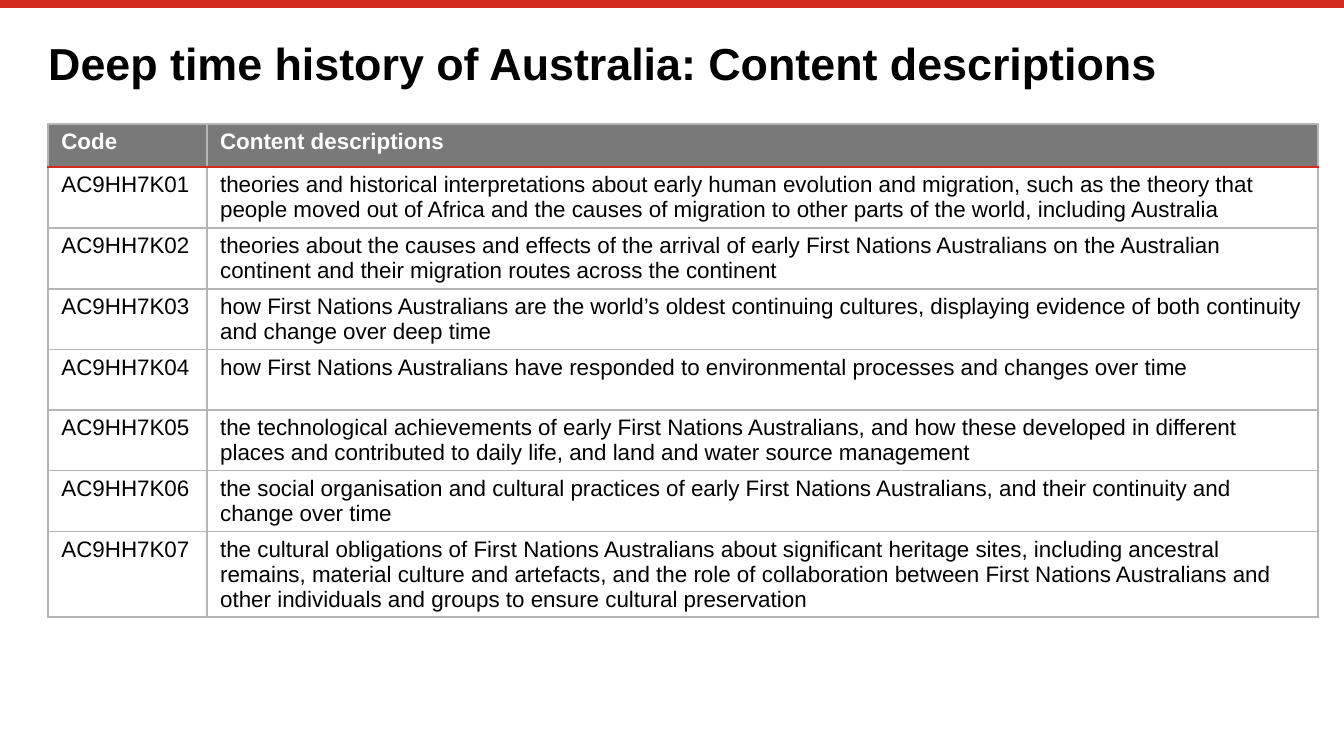
from lxml.etree import SubElement
from pptx import Presentation
from pptx.dml.color import RGBColor
from pptx.enum.shapes import MSO_CONNECTOR
from pptx.enum.text import MSO_ANCHOR, MSO_AUTO_SIZE, PP_ALIGN
from pptx.oxml import parse_xml
from pptx.oxml.ns import nsdecls, qn
from pptx.util import Cm, Pt

COLOURS = {
    "red": "D52B1E",
    "header": "797979",
    "border": "B5B5B5",
    "black": "000000",
    "white": "FFFFFF",
}

DESCRIPTIONS = [
    "theories and historical interpretations about early human evolution and migration, such as "
    "the theory that people moved out of Africa and the causes of migration to other parts of "
    "the world, including Australia",
    "theories about the causes and effects of the arrival of early First Nations Australians on "
    "the Australian continent and their migration routes across the continent",
    "how First Nations Australians are the world’s oldest continuing cultures, displaying "
    "evidence of both continuity and change over deep time",
    "how First Nations Australians have responded to environmental processes and changes over time",
    "the technological achievements of early First Nations Australians, and how these developed "
    "in different places and contributed to daily life, and land and water source management",
    "the social organisation and cultural practices of early First Nations Australians, and "
    "their continuity and change over time",
    "the cultural obligations of First Nations Australians about significant heritage sites, "
    "including ancestral remains, material culture and artefacts, and the role of collaboration "
    "between First Nations Australians and other individuals and groups to ensure cultural "
    "preservation",
]


class SlideBuilder:
    font_name = "Arial"

    def __init__(self, page):
        self.page = page

    def colour(self, name):
        return RGBColor.from_string(COLOURS[name])

    def format_text(self, paragraph, text, size, colour, bold=False):
        paragraph.alignment = PP_ALIGN.LEFT
        span = paragraph.add_run()
        span.text = text
        formats = {"name": self.font_name, "size": Pt(size), "bold": bold}
        for key, value in formats.items():
            setattr(span.font, key, value)
        span.font.color.rgb = self.colour(colour)

    def add_rule(self, left, top, right, colour, weight):
        rule = self.page.shapes.add_connector(
            MSO_CONNECTOR.STRAIGHT, Cm(left), Cm(top), Cm(right), Cm(top)
        )
        rule.line.color.rgb = self.colour(colour)
        rule.line.width = Pt(weight)
        SubElement(rule._element.spPr, qn("a:effectLst"))

    def add_title(self, text, left, top, width, height):
        box = self.page.shapes.title
        place = {"left": left, "top": top, "width": width, "height": height}
        for key, value in place.items():
            setattr(box, key, Cm(value))
        frame = box.text_frame
        formats = {
            "margin_left": 0,
            "margin_top": 0,
            "margin_right": 0,
            "margin_bottom": 0,
            "word_wrap": True,
            "auto_size": MSO_AUTO_SIZE.NONE,
            "vertical_anchor": MSO_ANCHOR.MIDDLE,
        }
        for key, value in formats.items():
            setattr(frame, key, value)
        paragraph = frame.paragraphs[0]
        paragraph.line_spacing = 0.9
        self.format_text(paragraph, text, 24, "black", bold=True)

    def set_borders(self, cell, top, bottom):
        grey = ("border", 1)
        properties = cell._tc.get_or_add_tcPr()
        sides = {"L": grey, "R": grey, "T": top, "B": bottom}
        for position, (side, (colour, weight)) in enumerate(sides.items()):
            border = parse_xml(
                f'<a:ln{side} {nsdecls("a")} w="{Pt(weight)}"><a:solidFill>'
                f'<a:srgbClr val="{COLOURS[colour]}"/></a:solidFill></a:ln{side}>'
            )
            properties.insert(position, border)

    def add_table(self, rows, left, top, widths, heights):
        table = self.page.shapes.add_table(
            len(rows), len(widths), Cm(left), Cm(top), Cm(sum(widths)), Cm(sum(heights))
        ).table
        table.horz_banding = False
        for column, width in zip(table.columns, widths):
            column.width = Cm(width)
        for index, (row, texts, height) in enumerate(zip(table.rows, rows, heights)):
            row.height = Cm(height)
            header = index == 0
            for cell, text in zip(row.cells, texts):
                margins = {"left": 0.25, "top": 0.1, "right": 0.25, "bottom": 0.1}
                for side, value in margins.items():
                    setattr(cell, f"margin_{side}", Cm(value))
                cell.vertical_anchor = MSO_ANCHOR.TOP
                if header:
                    cell.fill.solid()
                    cell.fill.fore_color.rgb = self.colour("header")
                else:
                    cell.fill.background()
                self.set_borders(
                    cell,
                    top=("red", 1.5) if index == 1 else ("border", 1),
                    bottom=("red", 1.5) if header else ("border", 1),
                )
                self.format_text(
                    cell.text_frame.paragraphs[0],
                    text,
                    12,
                    "white" if header else "black",
                    bold=header,
                )


def main():
    deck = Presentation()
    deck.slide_width = Cm(25.4)
    deck.slide_height = Cm(14.29)
    builder = SlideBuilder(deck.slides.add_slide(deck.slide_layouts[5]))
    builder.add_rule(0, 0.08, 25.4, "red", 4.2)
    builder.add_title(
        "Deep time history of Australia: Content descriptions", 0.91, 0.76, 23.6, 0.99
    )
    rows = [("Code", "Content descriptions")]
    rows += [(f"AC9HH7K{number:02}", text) for number, text in enumerate(DESCRIPTIONS, 1)]
    heights = [0.82] + [1.14] * 6 + [1.62]
    builder.add_table(rows, 0.91, 2.34, [3, 21], heights)
    deck.save("out.pptx")


if __name__ == "__main__":
    main()
